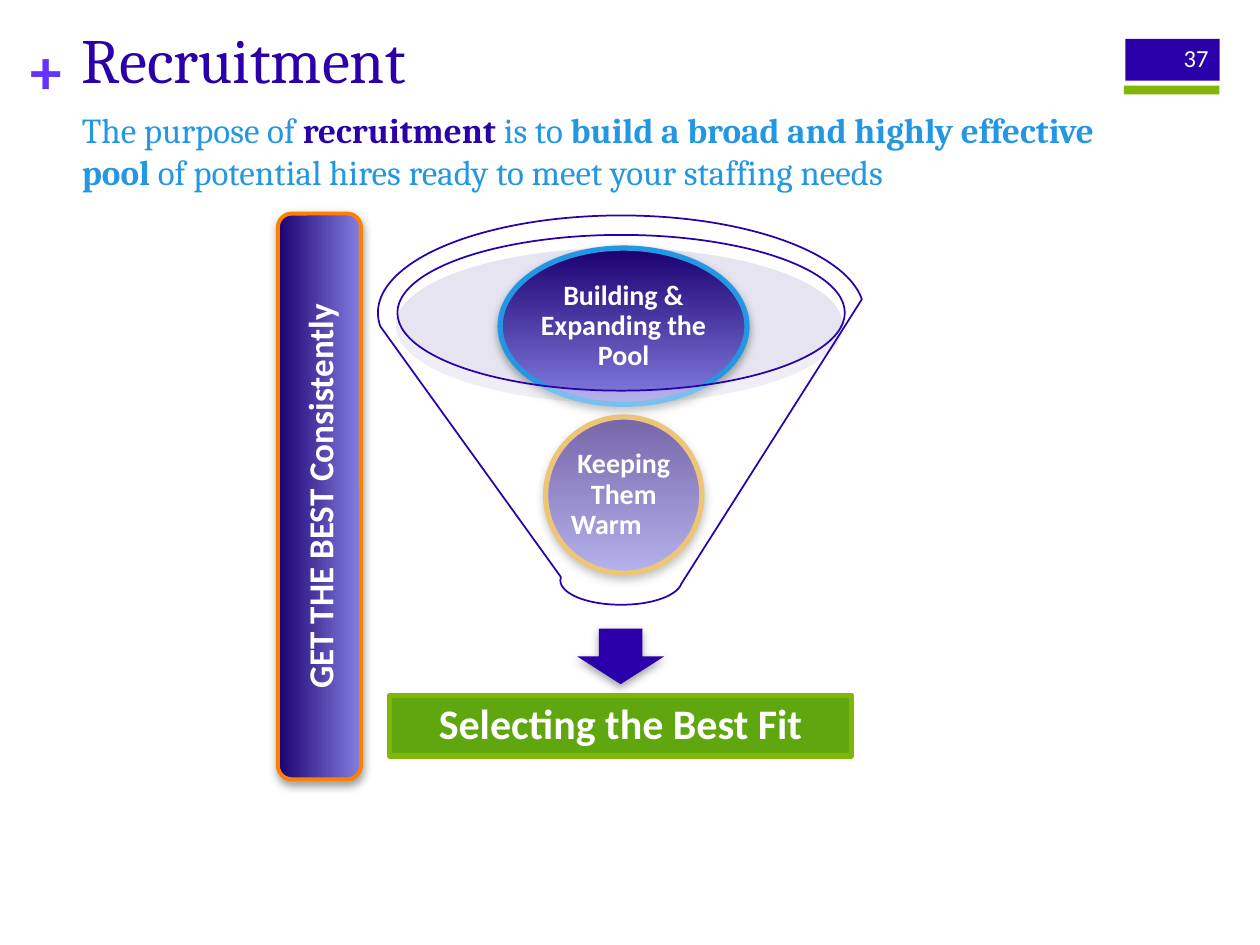
"""Build the recruitment funnel slide."""
import lxml.etree
import pptx
import pptx.dml.color
import pptx.enum.shapes
import pptx.enum.text
import pptx.oxml.ns
import pptx.util

Pt = pptx.util.Pt
qn = pptx.oxml.ns.qn
Kind = pptx.enum.shapes.MSO_SHAPE
Align = pptx.enum.text.PP_ALIGN
Anchor = pptx.enum.text.MSO_ANCHOR
NAVY, SKY, LIME, WHITE = "2900A9", "2397E2", "80B606", "FFFFFF"
DEEP, PALE = "1C0071", "837FE0"


def paint(color, tone):
    """Set a colour from a hex string."""
    color.rgb = pptx.dml.color.RGBColor.from_string(tone)


def place(shape, box):
    """Move and size a shape in points."""
    shape.left, shape.top, shape.width, shape.height = map(Pt, box)


def write(shape, runs, size, font="Calibri", align=Align.CENTER,
          anchor=Anchor.MIDDLE, pad=(7.2, 3.6), wrap=True, space=1):
    """Fill a frame with one paragraph of (text, colour, bold) runs."""
    frame = shape.text_frame
    frame.word_wrap = wrap
    frame.auto_size = pptx.enum.text.MSO_AUTO_SIZE.NONE
    frame.vertical_anchor = anchor
    frame.margin_left = frame.margin_right = Pt(pad[0])
    frame.margin_top = frame.margin_bottom = Pt(pad[1])
    para = frame.paragraphs[0]
    para.alignment = align
    para.line_spacing = space
    para.space_before = Pt(0)
    for text, tone, bold in runs:
        run = para.add_run()
        run.text = text
        run.font.name, run.font.size, run.font.bold = font, Pt(size), bold
        paint(run.font.color, tone)
    return para


def label(slide, box, text, size, tone, bold, **style):
    """Add a text box with one run."""
    item = slide.shapes.add_textbox(*map(Pt, box))
    write(item, [(text, tone, bold)], size, **style)


def shade(shape):
    """Add a soft grey shadow below a shape."""
    effects = shape._element.spPr.find(qn("a:effectLst"))
    outer = lxml.etree.SubElement(
        effects, qn("a:outerShdw"), blurRad=str(Pt(5)), dist=str(Pt(2)),
        dir="5400000", rotWithShape="0")
    color = lxml.etree.SubElement(outer, qn("a:srgbClr"), val="808080")
    lxml.etree.SubElement(color, qn("a:alpha"), val="75000")


def draw(slide, kind, box, fill=None, line=None, width=1, alpha=None, shadow=False):
    """Add a preset shape; without a fill it takes the violet gradient."""
    shape = slide.shapes.add_shape(kind, *map(Pt, box))
    shape.shadow.inherit = False
    if fill:
        shape.fill.solid()
        paint(shape.fill.fore_color, fill)
    else:
        shape.fill.gradient()
        shape.fill.gradient_angle = 270
        for stop, tone, spot in zip(shape.fill.gradient_stops, (DEEP, PALE), (0, 1)):
            paint(stop.color, tone)
            stop.position = spot
    if alpha:
        color = shape._element.spPr.find(qn("a:solidFill"))[0]
        lxml.etree.SubElement(color, qn("a:alpha"), val=str(alpha * 1000))
    if line:
        paint(shape.line.color, line)
        shape.line.width = Pt(width)
    else:
        shape.line.fill.background()
    if shadow:
        shade(shape)
    return shape


def head(slide):
    """Fill the title, the body and the page number."""
    label(slide, (17.3, 18, 20.9, 43.9), "+", 36, "6432FF", True,
          align=Align.LEFT, anchor=Anchor.TOP, pad=(0, 0), wrap=False)
    draw(slide, Kind.RECTANGLE, (643, 22.3, 54, 23.8), NAVY)
    draw(slide, Kind.RECTANGLE, (642.2, 49, 54.7, 5), LIME)
    title, body = slide.shapes.title, slide.placeholders[1]
    place(title, (39.6, -20.2, 594.7, 78.5))
    write(title, [("Recruitment", NAVY, False)], 36, "Cambria",
          Align.LEFT, Anchor.BOTTOM)
    place(body, (39.6, 58.3, 595.4, 61.2))
    props = body.text_frame.paragraphs[0]._p.get_or_add_pPr()
    props.set("marL", "0")
    props.set("indent", "0")
    lxml.etree.SubElement(props, qn("a:buNone"))
    write(body, [
        ("The purpose of ", SKY, False),
        ("recruitment", NAVY, True),
        (" is to ", SKY, False),
        ("build a broad and highly effective pool", SKY, True),
        (" of potential hires ready to meet your staffing needs", SKY, False),
    ], 20, "Cambria", Align.LEFT, Anchor.TOP)
    label(slide, (653.8, 18.7, 43.9, 28.8), "37", 14, WHITE, False,
          align=Align.RIGHT)


def funnel(slide):
    """Draw the funnel, its two stages and the outcome."""
    draw(slide, Kind.OVAL, (226.1, 141.8, 255.6, 88.6), "BEBDDA", alpha=40)
    draw(slide, Kind.DOWN_ARROW, (329.8, 359.3, 49.7, 31.7), NAVY, shadow=True)
    goal = draw(slide, Kind.RECTANGLE, (222.5, 397.4, 264.2, 34.6),
                "60A60E", LIME, 3)
    write(goal, [("Selecting the Best Fit", WHITE, True)], 24,
          pad=(13.7, 0), space=0.9)
    stages = [
        ("Keeping Them Warm\t", (311.8, 238.3, 89.3, 89.3), "E29F1D"),
        ("Building & Expanding the Pool", (285.8, 141.8, 141.1, 89.3), SKY),
    ]
    for text, box, line in stages:
        oval = draw(slide, Kind.OVAL, box, line=line, width=3, shadow=True)
        write(oval, [(text, WHITE, True)], 16, pad=(1.4, 1.4), space=0.9)
    draw(slide, Kind.FUNNEL, (216, 123.1, 277.9, 222.5), WHITE, NAVY, alpha=40)


def banner(slide):
    """Draw the upright banner beside the funnel."""
    bar = draw(slide, Kind.ROUNDED_RECTANGLE, (20.9, 259.9, 323.3, 47.5),
               line="FF8000", width=2.25, shadow=True)
    bar.rotation = 270
    write(bar, [("GET THE BEST Consistently", WHITE, True)], 20)


def main():
    """Build and save the slide."""
    deck = pptx.Presentation()
    deck.slide_width, deck.slide_height = Pt(720), Pt(540)
    slide = deck.slides.add_slide(deck.slide_layouts[1])
    head(slide)
    funnel(slide)
    banner(slide)
    deck.save("out.pptx")


if __name__ == "__main__":
    main()
